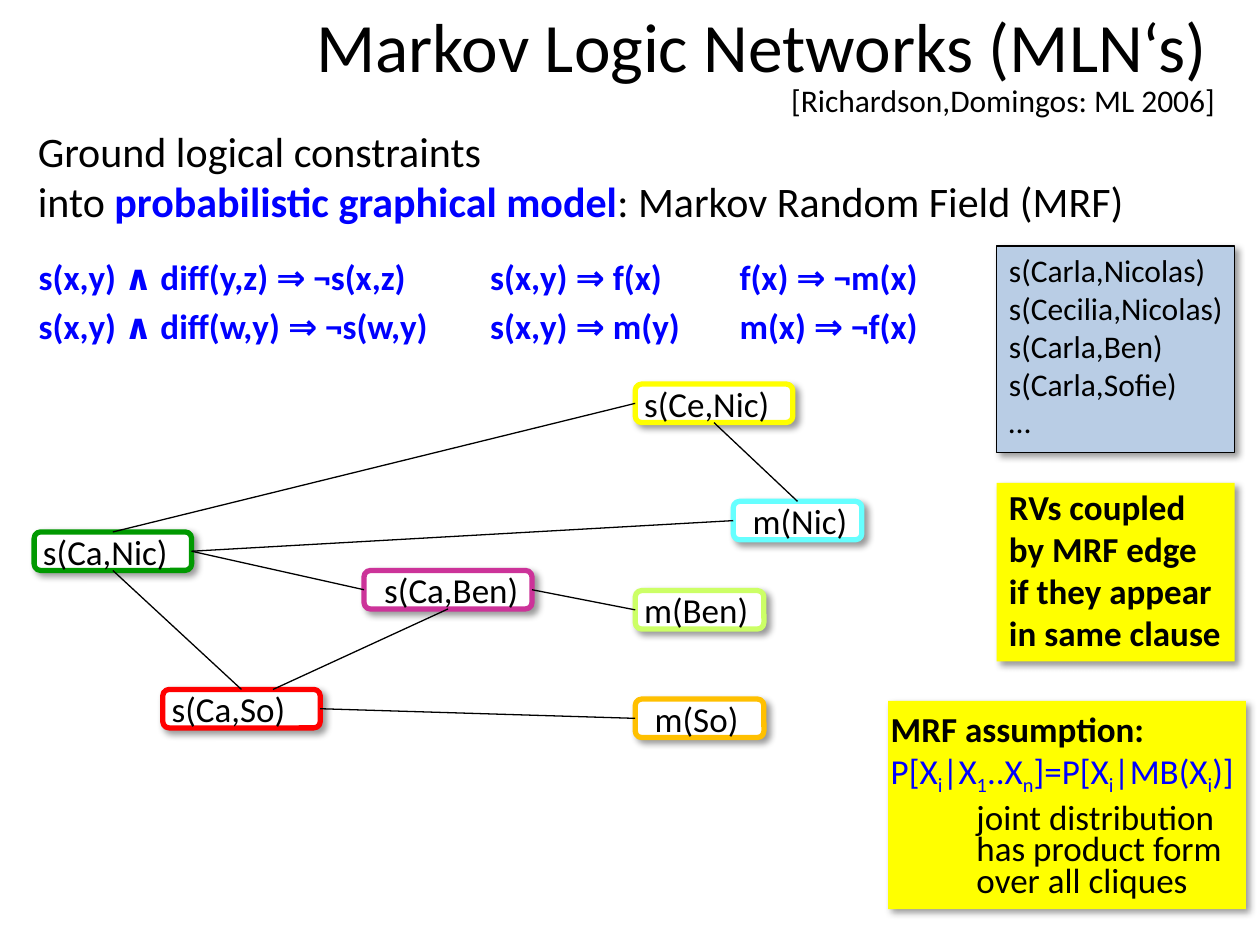
from lxml import etree
from pptx import Presentation
from pptx.dml.color import RGBColor
from pptx.enum.shapes import MSO_CONNECTOR, MSO_SHAPE
from pptx.enum.text import MSO_ANCHOR, MSO_AUTO_SIZE, PP_ALIGN
from pptx.oxml import parse_xml
from pptx.oxml.ns import nsdecls, qn
from pptx.util import Pt

RECT, ROUNDED = MSO_SHAPE.RECTANGLE, MSO_SHAPE.ROUNDED_RECTANGLE
STRAIGHT = MSO_CONNECTOR.STRAIGHT
TOP, LEFT, BOTTOM, RIGHT = range(4)

BLACK = RGBColor(0x00, 0x00, 0x00)
WHITE = RGBColor(0xFF, 0xFF, 0xFF)
BLUE = RGBColor(0x00, 0x00, 0xFF)
YELLOW = RGBColor(0xFF, 0xFF, 0x00)
PALE_BLUE = RGBColor(0xB9, 0xCD, 0xE5)
RED = RGBColor(0xFF, 0x00, 0x00)
CYAN = RGBColor(0x66, 0xFF, 0xFF)
LIME = RGBColor(0xCC, 0xFF, 0x66)
ORANGE = RGBColor(0xFF, 0xC0, 0x00)
GREEN = RGBColor(0x00, 0x99, 0x00)
PURPLE = RGBColor(0xCC, 0x33, 0x99)

TITLE = "Markov Logic Networks (MLN‘s)"
CITATION = "[Richardson,Domingos: ML 2006]"
INTRO = ["Ground logical constraints", "into "]
INTRO_KEY = "probabilistic graphical model"
INTRO_END = ": Markov Random Field (MRF)"

RULE_COLUMNS = [  # left, width, rules from top to bottom
    (15, 243, ["s(x,y) ∧ diff(y,z) ⇒ ¬s(x,z)", "s(x,y) ∧ diff(w,y) ⇒ ¬s(w,y)"]),
    (273, 132, ["s(x,y) ⇒ f(x)", "s(x,y) ⇒ m(y)"]),
    (415.5, 132, ["f(x) ⇒ ¬m(x)", "m(x) ⇒ ¬f(x)"]),
]
RULE_TOP, RULE_PITCH, RULE_HEIGHT = 142.5, 28, 32

FACTS = ["s(Carla,Nicolas)", "s(Cecilia,Nicolas)", "s(Carla,Ben)", "s(Carla,Sofie)", "…"]
COUPLING = ["RVs coupled", "by MRF edge", "if they appear", "in same clause"]
ASSUMPTION = ["MRF assumption:", "", "joint distribution", "has product form",
              "over all cliques"]
FORMULA = [("P[X", "i"), ("|X", "1"), ("..X", "n"), ("]=P[X", "i"),
           ("|MB(X", "i"), (")]", "")]  # text, subscript

NODE_HEIGHT = 22
NODES = {  # left, top, width, outline, text inset
    "s(Ca,So)": (93, 394, 90, RED, 4),
    "s(Ce,Nic)": (363, 219.5, 90, YELLOW, 4),
    "m(Nic)": (419, 286.5, 73.5, CYAN, 10),
    "m(Ben)": (363, 337.5, 73.5, LIME, 4),
    "m(So)": (363, 399.5, 73.5, ORANGE, 10),
    "s(Ca,Nic)": (19.5, 304, 90, GREEN, 4),
    "s(Ca,Ben)": (208, 326, 96, PURPLE, 10.5),
}
EDGES = [
    ("s(Ce,Nic)", BOTTOM, "m(Nic)", TOP),
    ("s(Ca,Nic)", BOTTOM, "s(Ca,So)", TOP),
    ("s(Ca,Nic)", RIGHT, "s(Ca,Ben)", LEFT),
    ("s(Ca,Nic)", TOP, "s(Ce,Nic)", LEFT),
    ("s(Ca,Nic)", RIGHT, "m(Nic)", LEFT),
    ("s(Ca,Ben)", RIGHT, "m(Ben)", LEFT),
    ("s(Ca,So)", RIGHT, "m(So)", LEFT),
]
OFF_CENTRE_START = (156, 394)  # on the top side of s(Ca,So)

prs = Presentation()
prs.slide_width, prs.slide_height = Pt(720), Pt(540)
slide = prs.slides.add_slide(prs.slide_layouts[5])
shapes = slide.shapes


def style(font, size, color=BLACK, bold=False):
    font.name, font.size, font.bold = "Calibri", Pt(size), bold
    font.color.rgb = color


def write(sp, lines, size, color=BLACK, bold=False, anchor=MSO_ANCHOR.TOP,
          insets=(7.2, 3.6, 7.2, 3.6)):
    tf = sp.text_frame
    tf.word_wrap = True
    tf.vertical_anchor = anchor
    tf.margin_left, tf.margin_top, tf.margin_right, tf.margin_bottom = map(Pt, insets)
    for i, line in enumerate(lines):
        p = tf.add_paragraph() if i else tf.paragraphs[0]
        p.alignment = PP_ALIGN.LEFT
        style(p.font, size, color, bold)
        if line:
            p.add_run().text = line
    return tf.paragraphs


def text_box(box, lines, size, **options):
    return write(shapes.add_textbox(*map(Pt, box)), lines, size, **options)


def panel(kind, box, fill, line=None, line_width=0.75):
    """Add a filled shape with a soft shadow to the lower right."""
    sp = shapes.add_shape(kind, *map(Pt, box))
    sp.fill.solid()
    sp.fill.fore_color.rgb = fill
    if line is None:
        sp.line.fill.background()
    else:
        sp.line.color.rgb = line
        sp.line.width = Pt(line_width)
    sp.shadow.inherit = False
    sp._element.spPr.find(qn("a:effectLst")).append(parse_xml(
        f'<a:outerShdw {nsdecls("a")} blurRad="{Pt(4)}" dist="{Pt(3)}" dir="2700000" '
        'rotWithShape="0"><a:srgbClr val="000000"><a:alpha val="40000"/></a:srgbClr>'
        '</a:outerShdw>'))
    return sp


def edge(start, end):
    line = shapes.add_connector(STRAIGHT, *map(Pt, start + end))
    line.line.color.rgb = BLACK
    line.line.width = Pt(0.75)
    etree.SubElement(line._element.spPr, qn("a:effectLst"))
    return line


# Heading
title = shapes.title
title.left, title.top, title.width, title.height = map(Pt, (0, 3.5, 706, 50))
tf = title.text_frame
tf.text = TITLE
tf.auto_size = MSO_AUTO_SIZE.NONE
tf.vertical_anchor = MSO_ANCHOR.MIDDLE
tf.margin_right = Pt(16)
p = tf.paragraphs[0]
p.alignment = PP_ALIGN.RIGHT
p.line_spacing = 0.9
style(p.font, 39.6)
text_box((445, 43, 268, 29), [CITATION], 18)

p = text_box((14.5, 68, 655, 65.5), INTRO, 24)[1]
r = p.add_run()
r.text = INTRO_KEY
r.font.bold = True
r.font.color.rgb = BLUE
p.add_run().text = INTRO_END

# Rules
for left, width, rules in RULE_COLUMNS:
    for row, rule in enumerate(rules):
        text_box((left, RULE_TOP + row * RULE_PITCH, width, RULE_HEIGHT), [rule], 20,
                 color=BLUE, bold=True)

# Side panels
write(panel(RECT, (569.5, 140.5, 136, 118), PALE_BLUE, BLACK), FACTS, 18,
      insets=(7.2, 3, 0, 0))
write(panel(RECT, (569.5, 276, 136, 102), YELLOW), COUPLING, 20, bold=True,
      insets=(7.2, 1.5, 0, 0))
heading, formula, *conclusion = write(panel(RECT, (507.5, 400.5, 204.5, 119), YELLOW),
                                      ASSUMPTION, 20, insets=(1.5, 3.6, 0, 0))
heading.font.bold = True
formula.font.color.rgb = BLUE
for text, subscript in FORMULA:
    formula.add_run().text = text
    if subscript:
        r = formula.add_run()
        r.text = subscript
        r._r.get_or_add_rPr().set("baseline", "-25000")
for p in conclusion:
    p.line_spacing = Pt(18)
    p._p.get_or_add_pPr().set("marL", str(Pt(49)))
conclusion[0].space_before = Pt(5)

# Graph
nodes = {}
for name, (left, top, width, color, inset) in NODES.items():
    nodes[name] = panel(ROUNDED, (left, top, width, NODE_HEIGHT), WHITE, color, 3)
    write(nodes[name], [name], 20, anchor=MSO_ANCHOR.MIDDLE, insets=(inset, 0, 0, 0))
for start, start_side, end, end_side in EDGES:
    line = edge((0, 0), (0, 0))
    line.begin_connect(nodes[start], start_side)
    line.end_connect(nodes[end], end_side)
edge(OFF_CENTRE_START, (0, 0)).end_connect(nodes["s(Ca,Ben)"], BOTTOM)

prs.save("out.pptx")
